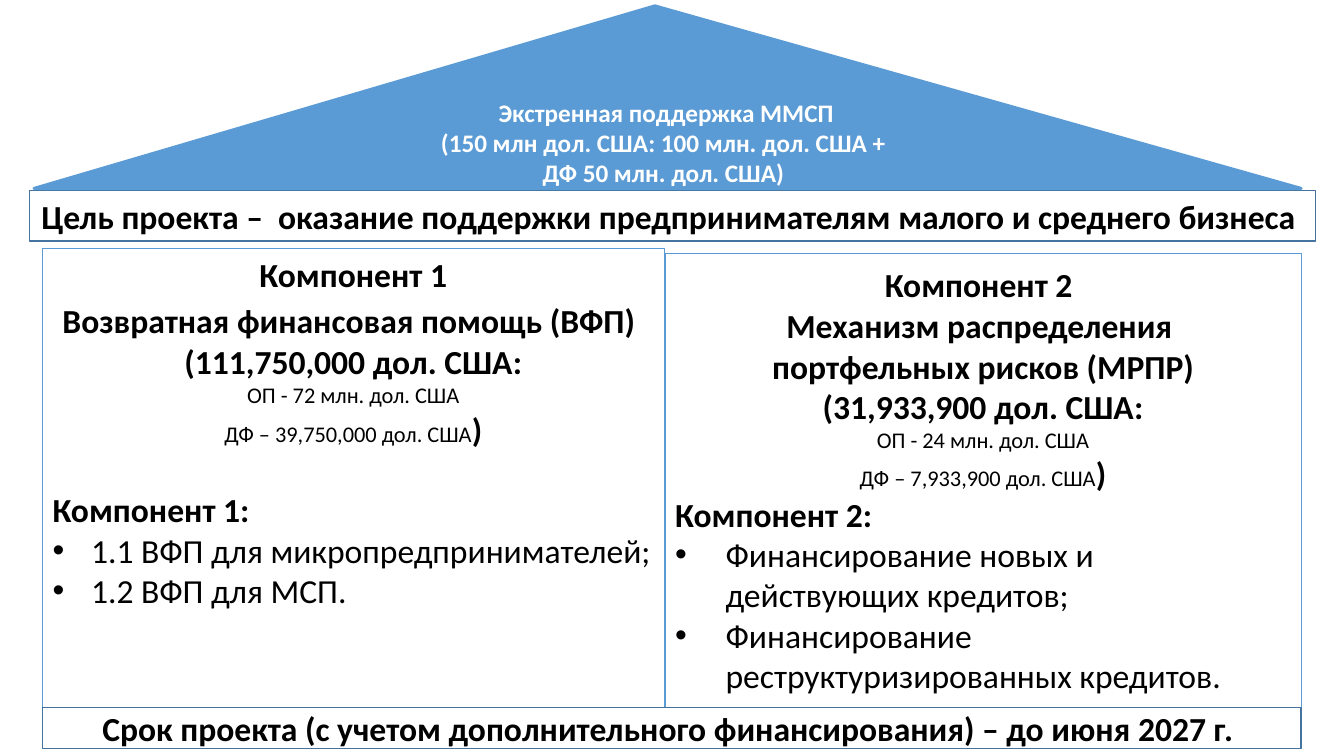
from dataclasses import dataclass

from lxml import etree
from pptx import Presentation
from pptx.dml.color import RGBColor
from pptx.enum.shapes import MSO_SHAPE
from pptx.enum.text import MSO_ANCHOR, MSO_AUTO_SIZE, PP_ALIGN
from pptx.oxml.ns import qn
from pptx.util import Cm, Pt

RECTANGLE = MSO_SHAPE.RECTANGLE
TRIANGLE = MSO_SHAPE.ISOSCELES_TRIANGLE
TOP, MIDDLE = MSO_ANCHOR.TOP, MSO_ANCHOR.MIDDLE
LEFT, CENTER = PP_ALIGN.LEFT, PP_ALIGN.CENTER
NO_AUTOFIT = MSO_AUTO_SIZE.NONE
TWO_CONTENT_LAYOUT = 3
FONT = "Calibri"
COLORS = {
    "roof": "5B9BD5",
    "bar_line": "43739E",
    "paper": "FFFFFF",
    "ink": "000000",
}


@dataclass(frozen=True)
class Span:
    text: str
    size: float = 24
    bold: bool = True


@dataclass(frozen=True)
class Para:
    spans: tuple[Span, ...]
    align: PP_ALIGN = CENTER
    bullet_indent: float = 0
    space_before: float = 0


@dataclass(frozen=True)
class Box:
    left: float
    top: float
    width: float
    height: float
    paras: tuple[Para, ...]
    line: str
    line_width: float
    fill: str = ""
    anchor: MSO_ANCHOR = TOP
    ink: str = "ink"


def heading(text: str, size: float = 24) -> Para:
    return Para((Span(text, size),))


def spaced_heading(text: str) -> Para:
    return Para((Span(text), Span(" ", 28)))


def funding(loan: str, extra: str) -> tuple[Para, Para]:
    return (
        Para((Span(loan, 16, False),)),
        Para((Span(extra, 16, False), Span(")"))),
    )


def listing(title: str, items: tuple[str, ...], indent: float, gap: float = 0) -> tuple[Para, ...]:
    bullets = tuple(Para((Span(item, bold=False),), LEFT, indent) for item in items)
    return (Para((Span(title),), LEFT, space_before=gap), *bullets)


def rgb(name: str) -> RGBColor:
    return RGBColor.from_string(COLORS[name])


def set_bullet(paragraph, indent: float) -> None:
    properties = paragraph._p.get_or_add_pPr()
    properties.set("marL", str(Cm(indent)))
    properties.set("indent", str(-Cm(indent)))
    if indent:
        etree.SubElement(properties, qn("a:buFont")).set("typeface", "Arial")
        etree.SubElement(properties, qn("a:buChar")).set("char", "•")
    else:
        etree.SubElement(properties, qn("a:buNone"))


def write_para(paragraph, para: Para, ink: str) -> None:
    set_bullet(paragraph, para.bullet_indent)
    paragraph.alignment = para.align
    paragraph.space_before = Pt(para.space_before)
    paragraph.space_after = Pt(0)
    paragraph.line_spacing = 1.0
    base = para.spans[0]
    paragraph.font.name = FONT
    paragraph.font.size = Pt(base.size)
    paragraph.font.bold = base.bold
    paragraph.font.color.rgb = rgb(ink)
    for span in para.spans:
        run = paragraph.add_run()
        run.text = span.text
        if span.size != base.size:
            run.font.size = Pt(span.size)
        if span.bold != base.bold:
            run.font.bold = span.bold


def fill_box(shape, box: Box) -> None:
    shape.left, shape.top = Cm(box.left), Cm(box.top)
    shape.width, shape.height = Cm(box.width), Cm(box.height)
    if box.fill:
        shape.fill.solid()
        shape.fill.fore_color.rgb = rgb(box.fill)
    else:
        shape.fill.background()
    shape.line.color.rgb = rgb(box.line)
    shape.line.width = Pt(box.line_width)
    frame = shape.text_frame
    frame.word_wrap = True
    frame.auto_size = NO_AUTOFIT
    frame.vertical_anchor = box.anchor
    for index, para in enumerate(box.paras):
        paragraph = frame.add_paragraph() if index else frame.paragraphs[0]
        write_para(paragraph, para, box.ink)


def add_box(slide, preset: MSO_SHAPE, box: Box):
    shape = slide.shapes.add_shape(preset, 0, 0, 0, 0)
    shape.shadow.inherit = False
    fill_box(shape, box)
    return shape


GOAL = Box(
    0.74, 4.8, 32.41, 1.27,
    (heading("Цель проекта –  оказание поддержки предпринимателям малого и среднего бизнеса "),),
    "bar_line", 1, "paper", MIDDLE,
)
TERM = Box(
    1.07, 17.83, 31.72, 1.04,
    (heading("Срок проекта (с учетом дополнительного финансирования) – до июня 2027 г. "),),
    "bar_line", 1, "paper", MIDDLE,
)
ROOF = Box(
    0.86, 0.15, 31.93, 4.6,
    (
        heading("Экстренная поддержка ММСП", 18),
        heading("(150 млн дол. США: 100 млн. дол. США + ", 18),
        heading("ДФ 50 млн. дол. США) ", 18),
    ),
    "roof", 2.25, "roof", ink="paper",
)
COMPONENTS = (
    Box(
        1.07, 6.27, 15.67, 11.56,
        (
            heading("Компонент 1"),
            spaced_heading("Возвратная финансовая помощь (ВФП)"),
            heading("(111,750,000 дол. США:"),
            *funding("ОП - 72 млн. дол. США", "ДФ – 39,750,000 дол. США"),
            *listing(
                "Компонент 1:",
                ("1.1 ВФП для микропредпринимателей;", "1.2 ВФП для МСП."),
                0.97, 29,
            ),
        ),
        "roof", 0.75,
    ),
    Box(
        16.76, 6.38, 16.03, 11.48,
        (
            spaced_heading("Компонент 2"),
            heading("Механизм распределения "),
            heading("портфельных рисков (МРПР)"),
            heading("(31,933,900 дол. США:"),
            *funding("ОП - 24 млн. дол. США", "ДФ – 7,933,900 дол. США"),
            *listing(
                "Компонент 2:",
                (
                    "Финансирование новых и действующих кредитов;",
                    "Финансирование реструктуризированных кредитов.",
                ),
                1.27,
            ),
        ),
        "roof", 0.75,
    ),
)


def main() -> None:
    deck = Presentation()
    deck.slide_width, deck.slide_height = Cm(33.87), Cm(19.05)
    slide = deck.slides.add_slide(deck.slide_layouts[TWO_CONTENT_LAYOUT])
    title, *bodies = slide.placeholders
    fill_box(title, GOAL)
    for body, component in zip(bodies, COMPONENTS):
        fill_box(body, component)
    roof = add_box(slide, TRIANGLE, ROOF)
    roof.adjustments[0] = 0.49
    frame = roof.text_frame
    frame.margin_left, frame.margin_bottom = Cm(0.25), Cm(0.18)
    frame.margin_top = frame.margin_right = 0
    add_box(slide, RECTANGLE, TERM)
    deck.save("out.pptx")


if __name__ == "__main__":
    main()
